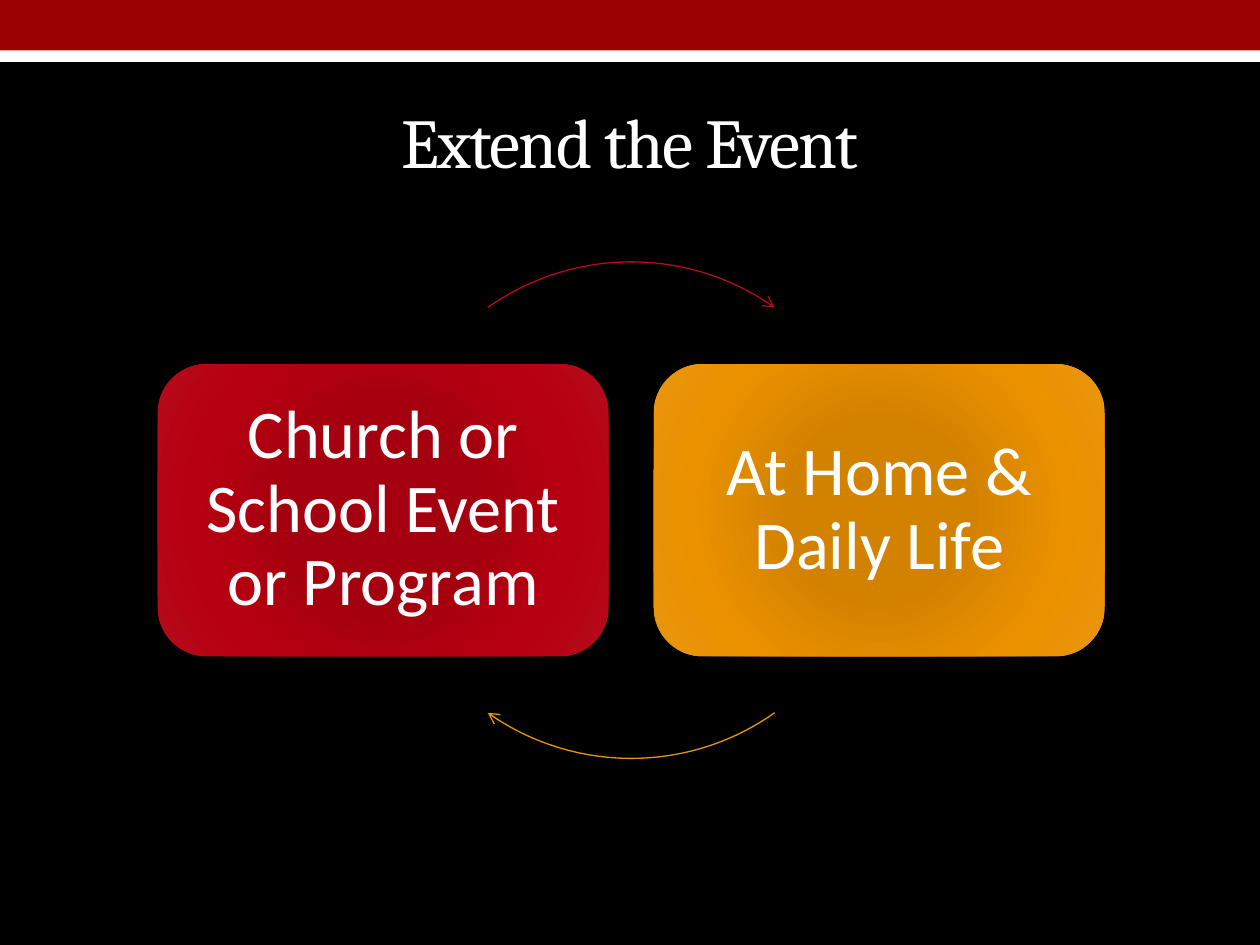
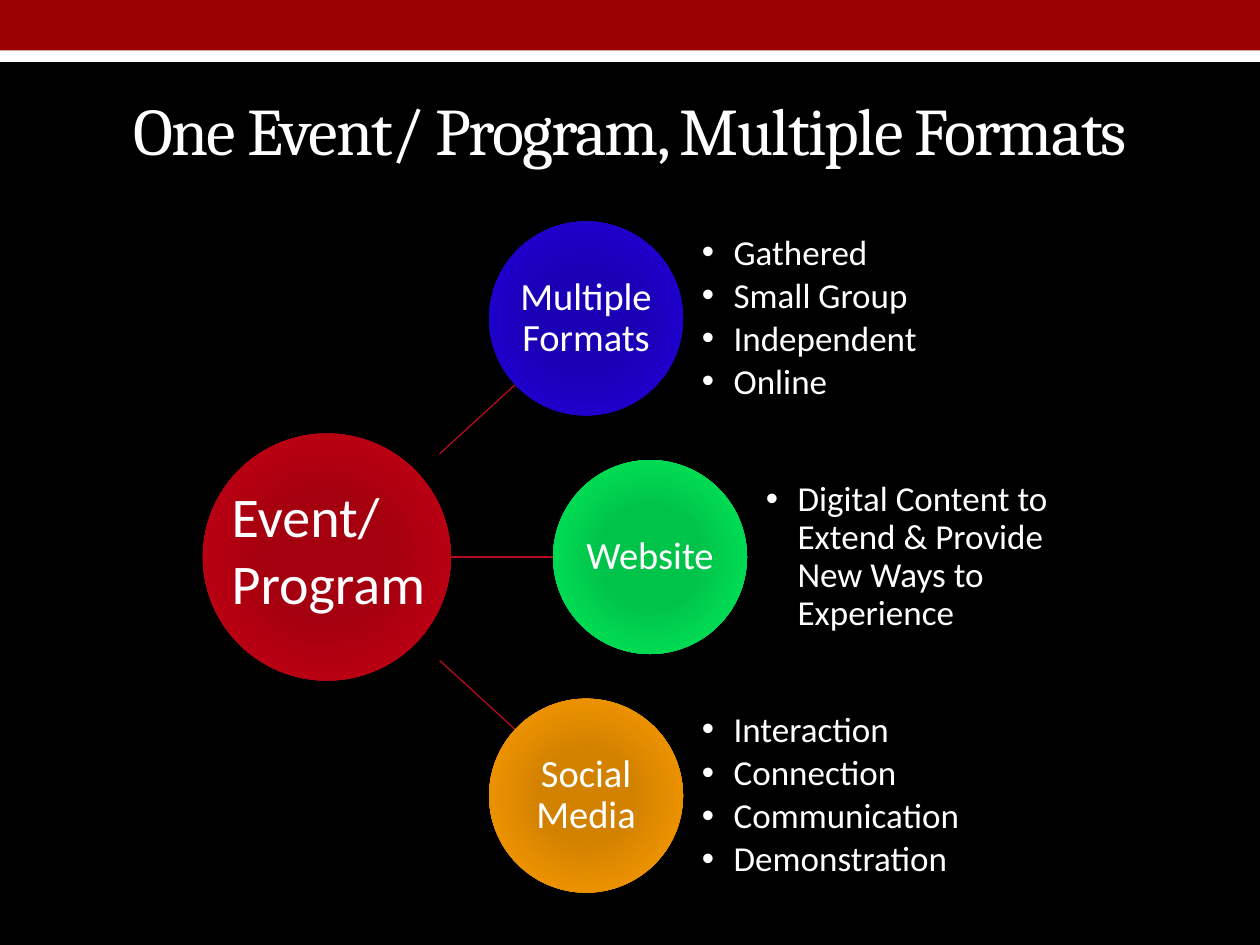
import pptx
import pptx.dml.color
import pptx.enum.shapes
import pptx.enum.text
import pptx.oxml
import pptx.oxml.ns
import pptx.util

Cm = pptx.util.Cm
Pt = pptx.util.Pt
RGBColor = pptx.dml.color.RGBColor
Shape = pptx.enum.shapes.MSO_SHAPE
Align = pptx.enum.text.PP_ALIGN
Anchor = pptx.enum.text.MSO_ANCHOR

BLACK = RGBColor(0x00, 0x00, 0x00)
WHITE = RGBColor(0xFF, 0xFF, 0xFF)
BAND_RED = RGBColor(0x9B, 0x01, 0x01)
RED = (RGBColor(0xA4, 0x00, 0x0F), RGBColor(0xB7, 0x00, 0x11), RGBColor(0xB5, 0x0B, 0x1B))
ORANGE = (RGBColor(0xD3, 0x82, 0x00), RGBColor(0xEB, 0x91, 0x00), RGBColor(0xE8, 0x95, 0x0E))
BLUE = (RGBColor(0x1A, 0x00, 0xB4), RGBColor(0x1D, 0x00, 0xC9), RGBColor(0x27, 0x0C, 0xC6))
GREEN = (RGBColor(0x00, 0xC3, 0x4A), RGBColor(0x00, 0xDA, 0x53), RGBColor(0x0D, 0xD7, 0x5A))

BODY_FONT = "Calibri"
TITLE_FONT = "Cambria"
PAGE_WIDTH = 25.4
PAGE_HEIGHT = 19.05
LINE_WIDTH = Pt(0.75)


def make_element(tag, **attributes):
    prefix = pptx.oxml.ns.nsdecls("a")
    pairs = " ".join(f'{name}="{value}"' for name, value in attributes.items())
    return pptx.oxml.parse_xml(f"<a:{tag} {prefix} {pairs}/>")


def write_text(shape, text, size=20, font=BODY_FONT, align=Align.LEFT, anchor=Anchor.MIDDLE,
               inset=None, line_spacing=None, space_after=0, tracking=None, bullet=None):
    frame = shape.text_frame
    frame.word_wrap = True
    frame.vertical_anchor = anchor
    if inset is not None:
        frame.margin_left = frame.margin_right = Cm(inset)
        frame.margin_top = frame.margin_bottom = Cm(inset)
    for index, content in enumerate(text.split("\n")):
        para = frame.add_paragraph() if index else frame.paragraphs[0]
        para.alignment = align
        para.space_after = Pt(space_after)
        if line_spacing:
            para.line_spacing = line_spacing
        if bullet:
            properties = para._p.get_or_add_pPr()
            properties.set("marL", str(Cm(0.64)))
            properties.set("indent", str(-Cm(0.64)))
            properties.append(make_element("buFont", typeface="Arial"))
            properties.append(make_element("buChar", char=bullet))
        span = para.add_run()
        span.text = content
        span.font.name = font
        span.font.size = Pt(size)
        span.font.color.rgb = WHITE
        if tracking:
            span._r.get_or_add_rPr().set("spc", str(tracking * 100))


def add_text(page, text, left, top, width, height, **text_format):
    box = page.shapes.add_textbox(Cm(left), Cm(top), Cm(width), Cm(height))
    write_text(box, text, **text_format)


def add_plain_shape(page, kind, left, top, width, height):
    shape = page.shapes.add_shape(kind, Cm(left), Cm(top), Cm(width), Cm(height))
    shape.shadow.inherit = False
    shape.line.fill.background()
    return shape


def add_band(page, top, height, colour):
    band = add_plain_shape(page, Shape.RECTANGLE, 0, top, PAGE_WIDTH, height)
    band.fill.solid()
    band.fill.fore_color.rgb = colour


def fill_radial(shape, tones):
    core, middle, edge = tones
    gradient = make_element("gradFill", rotWithShape=1)
    stops = make_element("gsLst")
    for position, colour in ((0, core), (34, core), (70, middle), (100, edge)):
        stop = make_element("gs", pos=position * 1000)
        stop.append(make_element("srgbClr", val=colour))
        stops.append(stop)
    circle = make_element("path", path="circle")
    circle.append(make_element("fillToRect", l=100000, t=100000, r=100000, b=100000))
    gradient.extend((stops, circle))
    shape.fill.background()
    properties = shape._element.spPr
    properties.replace(properties.find(pptx.oxml.ns.qn("a:noFill")), gradient)


def add_glowing_shape(page, kind, tones, left, top, width, height, text=None, **text_format):
    shape = add_plain_shape(page, kind, left, top, width, height)
    fill_radial(shape, tones)
    if text:
        write_text(shape, text, align=Align.CENTER, line_spacing=0.9, **text_format)


def add_arc_arrow(page, start_angle, end_angle, colour):
    arc = add_plain_shape(page, Shape.ARC, 7.72, 5.28, 10.01, 10.01)
    arc.fill.background()
    arc.adjustments[0] = start_angle * 0.6
    arc.adjustments[1] = end_angle * 0.6
    arc.line.color.rgb = colour
    arc.line.width = LINE_WIDTH
    arc.line._get_or_add_ln().append(make_element("tailEnd", type="arrow"))


def add_spoke(page, start_x, start_y, end_x, end_y):
    spoke = page.shapes.add_connector(pptx.enum.shapes.MSO_CONNECTOR.STRAIGHT,
                                      Cm(start_x), Cm(start_y), Cm(end_x), Cm(end_y))
    spoke.line.color.rgb = RED[2]
    spoke.line.width = LINE_WIDTH
    spoke._element.spPr.append(make_element("effectLst"))


def add_page(deck):
    page = deck.slides.add_slide(deck.slide_layouts[6])
    page.background.fill.solid()
    page.background.fill.fore_color.rgb = BLACK
    add_band(page, 0.61, 0.64, WHITE)
    add_band(page, 0, 1.02, BAND_RED)
    return page


def add_title(page, text, left, top, height, size):
    add_text(page, text, left, top, PAGE_WIDTH - 2 * left, height, size=size,
             font=TITLE_FONT, align=Align.CENTER, tracking=-1)


def build_cycle_page(deck):
    page = add_page(deck)
    settings = (("Church or School Event or Program", RED, 3.18, 234.7, 305.3),
                ("At Home & Daily Life", ORANGE, 13.18, 54.7, 125.3))
    for label, tones, left, start_angle, end_angle in settings:
        add_glowing_shape(page, Shape.ROUNDED_RECTANGLE, tones, left, 7.34, 9.09, 5.89,
                          label, size=39, inset=0.41)
        add_arc_arrow(page, start_angle, end_angle, tones[2])
    add_title(page, "Extend the Event", 1.27, 1.47, 2.74, 40)


def build_formats_page(deck):
    page = add_page(deck)
    add_title(page, "One Event/ Program, Multiple Formats", 0, 1.09, 3, 38)
    center_y = 11.23
    for direction in (-1, 1):
        add_spoke(page, 8.86, center_y + direction * 2.08, 10.39, center_y + direction * 3.48)
    add_spoke(page, 8.86, center_y, 11.15, center_y)
    add_glowing_shape(page, Shape.OVAL, RED, 4.09, 8.74, 5, 4.98)

    diameter = 3.91
    branches = (
        ("Multiple Formats", BLUE, 9.86, "Gathered\nSmall Group\nIndependent\nOnline"),
        ("Website", GREEN, 11.15, "Digital Content to Extend & Provide New Ways to Experience"),
        ("Social Media", ORANGE, 9.86, "Interaction\nConnection\nCommunication\nDemonstration"),
    )
    for row, (label, tones, left, details) in enumerate(branches):
        top = center_y - diameter / 2 + (row - 1) * 4.81
        add_glowing_shape(page, Shape.OVAL, tones, left, top, diameter, diameter,
                          label, size=22, inset=0.05)
        add_text(page, details, left + 4.29, top, 5.87, diameter, size=20, inset=0,
                 line_spacing=0.9, space_after=3, bullet="•")
    add_text(page, "Event/Program", 4.42, 9.58, 4.67, 3, size=32, anchor=Anchor.TOP)


def main():
    deck = pptx.Presentation()
    deck.slide_width = Cm(PAGE_WIDTH)
    deck.slide_height = Cm(PAGE_HEIGHT)
    build_cycle_page(deck)
    build_formats_page(deck)
    deck.save("out.pptx")


if __name__ == "__main__":
    main()
